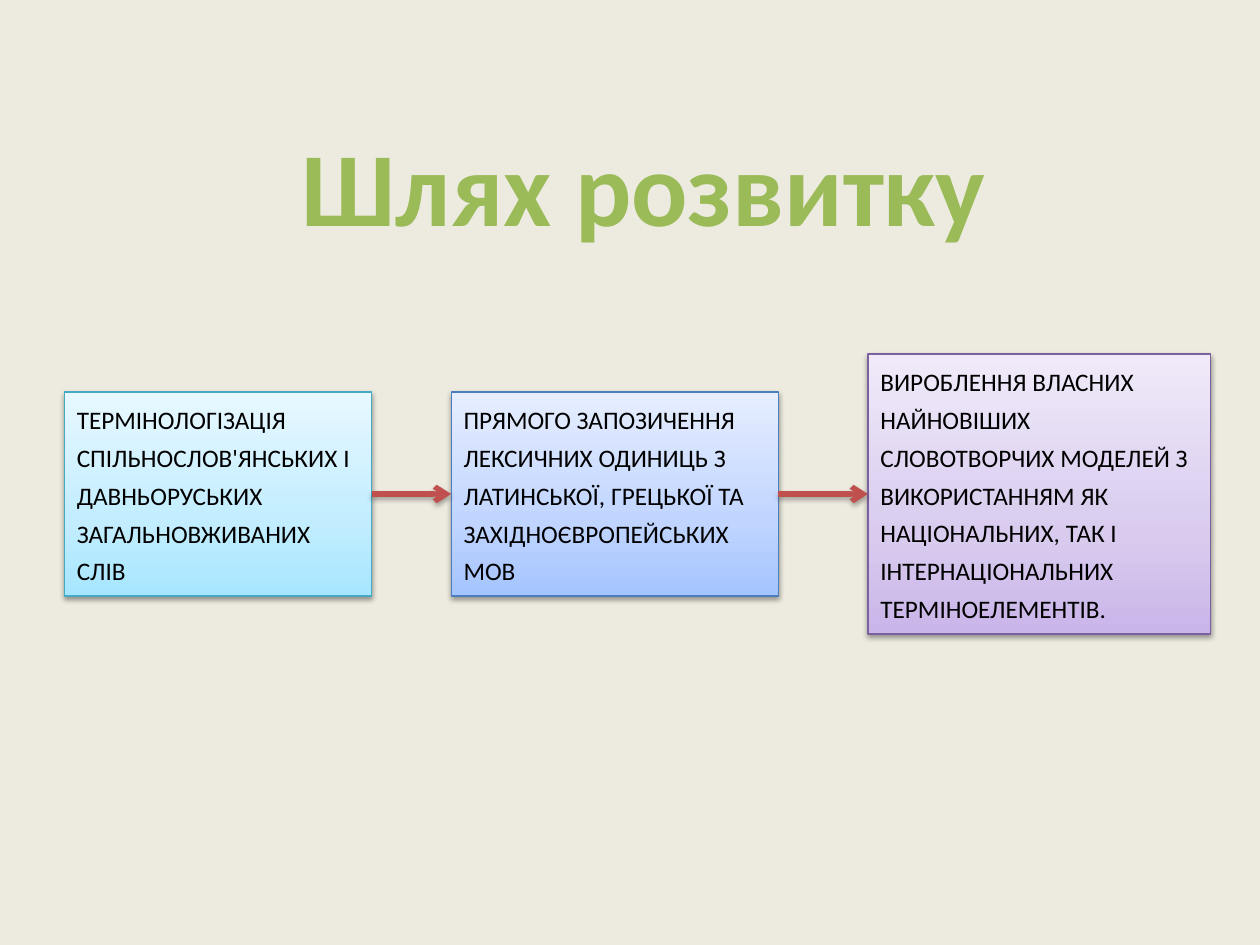
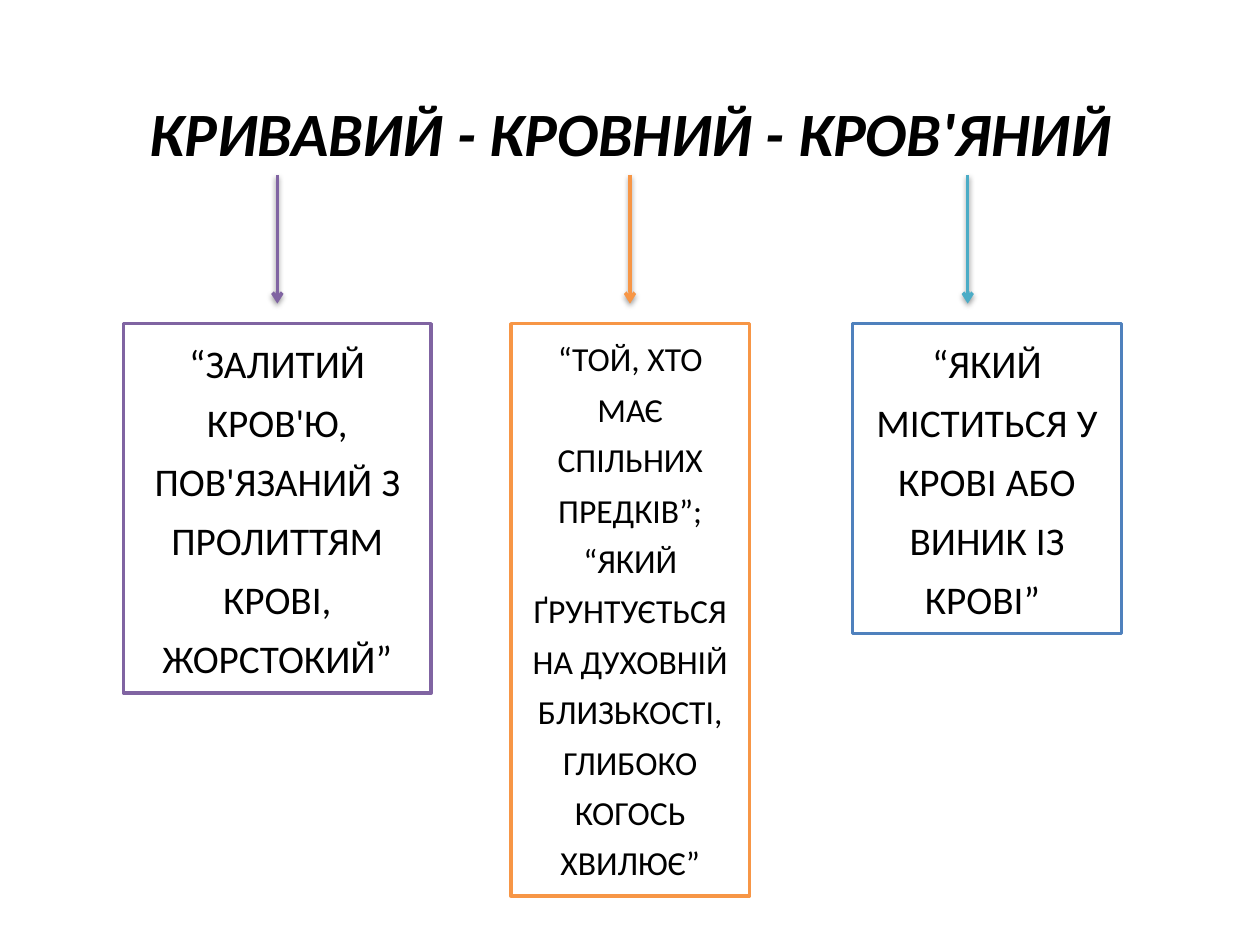
from copy import deepcopy
from dataclasses import dataclass
from itertools import pairwise

from lxml.etree import SubElement
from pptx import Presentation
from pptx.dml.color import RGBColor
from pptx.enum.shapes import MSO_CONNECTOR, MSO_SHAPE
from pptx.enum.text import MSO_ANCHOR, MSO_AUTO_SIZE, PP_ALIGN
from pptx.oxml.ns import qn
from pptx.util import Pt

# Content
PATH_TITLE = "Шлях розвитку"
# text, left, width, height, border, gradient from bottom to top
STAGES = [
    ("термінологізація спільнослов'янських і давньоруських загальновживаних слів",
     36.8, 175.6, 116.6, "46AAC5", ("A7E6FF", "C1EDFF", "E7F8FF")),
    ("прямого запозичення лексичних одиниць з латинської, грецької та "
     "західноєвропейських мов",
     257.8, 187, 116.6, "4B7EBC", ("A4C4FF", "BFD4FF", "E6EEFF")),
    ("вироблення власних найновіших словотворчих моделей з використанням як "
     "національних, так і інтернаціональних терміноелементів.",
     496, 195.8, 160, "7D60A0", ("C9B5E8", "D8CBEE", "F0EAF9")),
]
PARONYMS_TITLE = "кривавий - кровний - кров'яний"
# text, left, width, height, type size, border, arrow x, arrow colour
MEANINGS = [
    ("“залитий кров'ю, пов'язаний з пролиттям крові, жорстокий”",
     70.6, 175.8, 211, 28, "8064A2", 158.5, "8064A2"),
    ("“той, хто має спільних предків”;\n"
     "“який ґрунтується на духовній близькості, глибоко когось хвилює”",
     292, 136.4, 327, 24, "F79646", 360, "F79646"),
    ("“який міститься у крові або виник із крові” ",
     487.2, 153.6, 177, 28, "4F81BD", 553, "4BACC6"),
]


@dataclass(frozen=True)
class Theme:
    font: str = "Calibri"
    text: str = "000000"
    white: str = "FFFFFF"
    sand: str = "EDEBDF"
    green: str = "9BBB59"
    red: str = "C0504D"
    path_title: int = 60
    paronyms_title: int = 44
    stage: int = 18


THEME = Theme()
STAGE_MIDDLE = 282.3
MEANING_TOP = 185
ARROW_TOP, ARROW_BOTTOM = 100, 173.5


def rgb(colour):
    return RGBColor.from_string(colour)


def write(frame, text, *, size, colour=THEME.text, bold=False, italic=False,
          small_caps=True, align=PP_ALIGN.LEFT, anchor=MSO_ANCHOR.TOP):
    frame.word_wrap = True
    frame.vertical_anchor = anchor
    paragraph = frame.paragraphs[0]
    paragraph.text = text
    paragraph.alignment = align
    for run in paragraph.runs:
        font = run.font
        font.name, font.size = THEME.font, Pt(size)
        font.bold, font.italic = bold, italic
        font.color.rgb = rgb(colour)
        if small_caps:
            run.font._element.set("cap", "small")


def add_title(slide, text, left, top, height, **style):
    title = slide.shapes.add_textbox(Pt(left), Pt(top), Pt(648), Pt(height))
    write(title.text_frame, text, bold=True, align=PP_ALIGN.CENTER,
          anchor=MSO_ANCHOR.MIDDLE, **style)


def add_soft_shadow(part, opacity=38, distance=1.6):
    properties = part._element.spPr
    for old in properties.findall(qn("a:effectLst")):
        properties.remove(old)
    effects = SubElement(properties, qn("a:effectLst"))
    shadow = SubElement(effects, qn("a:outerShdw"), blurRad=str(Pt(3.1)),
                        dist=str(Pt(distance)), dir="5400000", rotWithShape="0")
    colour = SubElement(shadow, qn("a:srgbClr"), val="000000")
    SubElement(colour, qn("a:alpha"), val=str(opacity * 1000))


def add_box(slide, text, left, top, width, height, border, border_width, **style):
    box = slide.shapes.add_shape(MSO_SHAPE.RECTANGLE, Pt(left), Pt(top),
                                 Pt(width), Pt(height))
    box.shadow.inherit = False
    box.fill.solid()
    box.fill.fore_color.rgb = rgb(THEME.white)
    box.line.color.rgb = rgb(border)
    box.line.width = Pt(border_width)
    write(box.text_frame, text, **style)
    box.text_frame.auto_size = MSO_AUTO_SIZE.SHAPE_TO_FIT_TEXT
    return box


def shade(box, colours):
    box.fill.gradient()
    box.fill.gradient_angle = 90
    stop_list = box._element.spPr.find(".//" + qn("a:gsLst"))
    stop_list.insert(1, deepcopy(stop_list[0]))
    for stop, position, colour in zip(box.fill.gradient_stops, (0, 0.35, 1), colours):
        stop.position = position
        stop.color.rgb = rgb(colour)


def add_arrow(slide, start, end, colour, width, **shadow):
    arrow = slide.shapes.add_connector(MSO_CONNECTOR.STRAIGHT,
                                       *(Pt(value) for value in (*start, *end)))
    arrow.line.color.rgb = rgb(colour)
    arrow.line.width = Pt(width)
    SubElement(arrow.line._get_or_add_ln(), qn("a:tailEnd"), type="arrow")
    add_soft_shadow(arrow, **shadow)
    return arrow


def add_slide(deck, background):
    slide = deck.slides.add_slide(deck.slide_layouts[6])
    slide.background.fill.solid()
    slide.background.fill.fore_color.rgb = rgb(background)
    return slide


def build_path(deck):
    slide = add_slide(deck, THEME.sand)
    add_title(slide, PATH_TITLE, 44, 60.5, 90, size=THEME.path_title,
              colour=THEME.green, small_caps=False)

    # Stages share one middle line
    stages = []
    for text, left, width, height, border, colours in STAGES:
        stage = add_box(slide, text, left, STAGE_MIDDLE - height / 2, width, height,
                        border, 0.75, size=THEME.stage)
        shade(stage, colours)
        add_soft_shadow(stage)
        stages.append(stage)

    # Arrows from each stage to the next
    for before, after in pairwise(stages):
        arrow = add_arrow(slide, (0, 0), (0, 0), THEME.red, 3,
                          opacity=35, distance=1.8)
        arrow.begin_connect(before, 3)
        arrow.end_connect(after, 1)


def build_paronyms(deck):
    slide = add_slide(deck, THEME.white)
    add_title(slide, PARONYMS_TITLE, 36, 21.6, 100.8, size=THEME.paronyms_title,
              italic=True)

    # Each word points down to its meaning
    for text, left, width, height, size, border, arrow_x, arrow_colour in MEANINGS:
        add_box(slide, text, left, MEANING_TOP, width, height, border, 2,
                size=size, align=PP_ALIGN.CENTER)
        add_arrow(slide, (arrow_x, ARROW_TOP), (arrow_x, ARROW_BOTTOM),
                  arrow_colour, 2)


def main():
    deck = Presentation()
    deck.slide_width, deck.slide_height = Pt(720), Pt(540)
    build_path(deck)
    build_paronyms(deck)
    deck.save("out.pptx")


if __name__ == "__main__":
    main()
